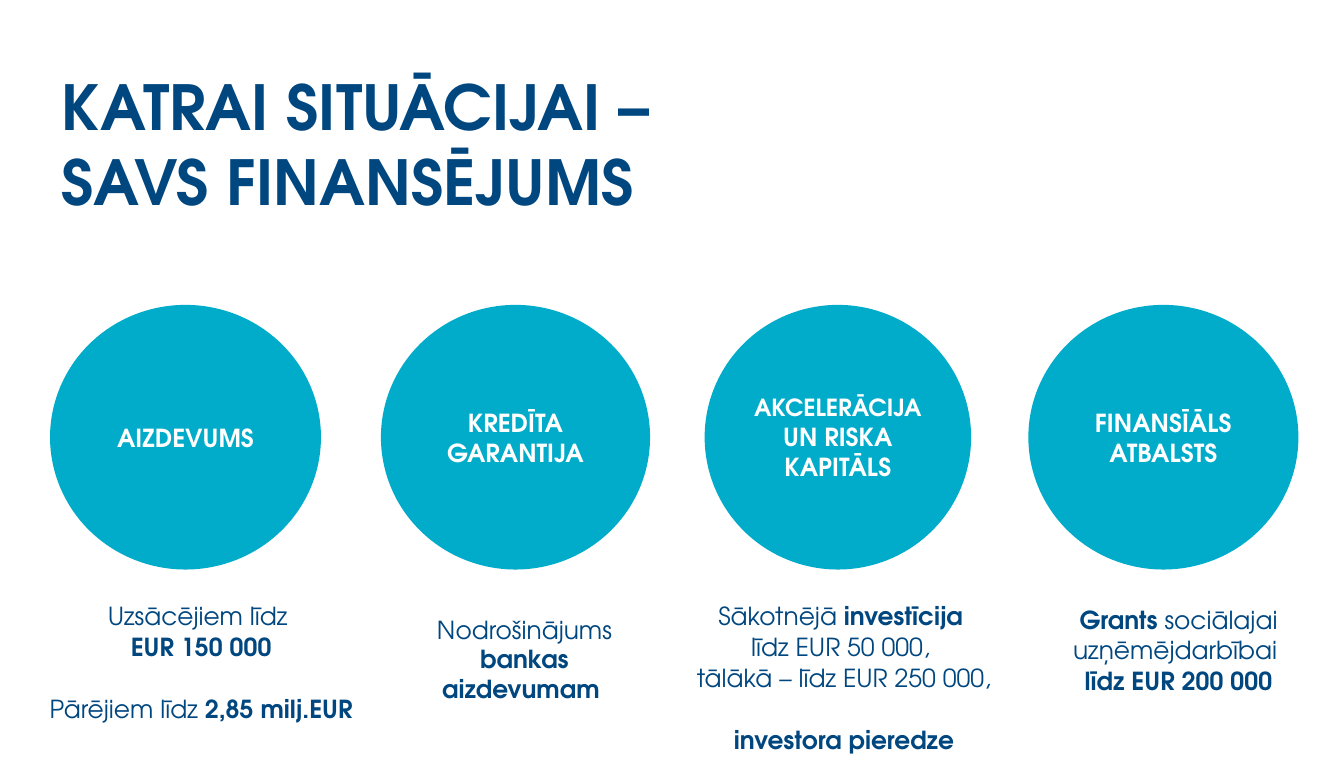
"""Build a slide of four kinds of funding, each a disc above a caption."""
from typing import NamedTuple

from pptx import Presentation
from pptx.dml.color import RGBColor
from pptx.enum.shapes import MSO_SHAPE
from pptx.enum.text import MSO_ANCHOR, MSO_AUTO_SIZE, PP_ALIGN
from pptx.slide import Slide
from pptx.text.text import TextFrame
from pptx.util import Inches, Pt

NAVY = RGBColor(0x00, 0x46, 0x7F)
TEAL = RGBColor(0x00, 0xAC, 0xC9)
WHITE = RGBColor(0xFF, 0xFF, 0xFF)
FONT = "TeX Gyre Adventor"
DISC_TOP, DISC_TALL = 3.41, 2.96


class Words(NamedTuple):
    """A run of text."""
    text: str
    bold: bool = False
    size: int = 20


class Line(NamedTuple):
    """A paragraph with the space before it in points."""
    pieces: tuple[Words, ...]
    before: int = 1


class Disc(NamedTuple):
    """A circle with its label."""
    left: float
    width: float
    lines: tuple[Line, ...]


class Note(NamedTuple):
    """A caption below a disc."""
    left: float
    top: float
    width: float
    height: float
    lines: tuple[Line, ...]


class Fund(NamedTuple):
    """One kind of funding."""
    disc: Disc
    note: Note


def label(*pieces: Words) -> tuple[Line, ...]:
    """Make one tight line for each piece."""
    return tuple(Line((piece,), 0) for piece in pieces)


TITLE = label(Words("KATRAI SITUĀCIJAI –", True, 50),
              Words("SAVS FINANSĒJUMS", True, 50))
FUNDS = (
    Fund(Disc(0.56, 3.03, label(Words("AIZDEVUMS", True))),
         Note(0.4, 6.71, 3.7, 1.4, (
             Line((Words("Uzsācējiem līdz "),), 0),
             Line((Words("EUR 150 000", True),)),
             Line((Words("Pārējiem līdz "),
                   Words("2,85 milj.EUR", True)), 26)))),
    Fund(Disc(4.26, 3.01, label(Words("KREDĪTA GARANTIJA", True))),
         Note(4.59, 6.86, 2.55, 1.02, (
             Line((Words("Nodrošinājums "),
                   Words("bankas aizdevumam ", True)), 0),))),
    Fund(Disc(7.88, 2.98, label(Words("AKCELERĀCIJA ", True, 19),
                                Words("UN RISKA KAPITĀLS", True))),
         Note(7.71, 6.71, 3.46, 1.75, (
             Line((Words("Sākotnējā "), Words("investīcija ", True)), 0),
             Line((Words("līdz EUR 50 000, "),)),
             Line((Words("tālākā – līdz EUR 250 000,"),)),
             Line((Words("investora pieredze", True),), 26)))),
    Fund(Disc(11.5, 3.02, label(Words("FINANSĪĀLS ATBALSTS", True))),
         Note(11.75, 6.75, 2.86, 1.04, (
             Line((Words("Grants", True),
                   Words(" sociālajai uzņēmējdarbībai ")), 0),
             Line((Words("līdz EUR 200 000", True),))))),
)


def write(frame: TextFrame, lines: tuple[Line, ...], color: RGBColor,
          align: PP_ALIGN = PP_ALIGN.CENTER) -> None:
    """Fill a frame with lines, run by run."""
    frame.word_wrap = True
    for place, line in enumerate(lines):
        para = frame.add_paragraph() if place else frame.paragraphs[0]
        para.alignment = align
        para.space_before = Pt(line.before)
        for piece in line.pieces:
            run = para.add_run()
            run.text = piece.text
            font = run.font
            font.name, font.size, font.bold = FONT, Pt(piece.size), piece.bold
            font.color.rgb = color


def draw_title(slide: Slide) -> None:
    """Place and fill the title."""
    title = slide.shapes.title
    title.left, title.top = Inches(0.59), Inches(0.72)
    title.width, title.height = Inches(13.59), Inches(1.78)
    frame = title.text_frame
    frame.auto_size = MSO_AUTO_SIZE.NONE
    frame.vertical_anchor = MSO_ANCHOR.TOP
    write(frame, TITLE, NAVY, PP_ALIGN.LEFT)


def draw_disc(slide: Slide, disc: Disc) -> None:
    """Draw a circle with its label."""
    shape = slide.shapes.add_shape(
        MSO_SHAPE.OVAL, Inches(disc.left), Inches(DISC_TOP),
        Inches(disc.width), Inches(DISC_TALL))
    shape.shadow.inherit = False
    shape.fill.solid()
    shape.fill.fore_color.rgb = TEAL
    shape.line.fill.background()
    shape.text_frame.vertical_anchor = MSO_ANCHOR.MIDDLE
    write(shape.text_frame, disc.lines, WHITE)


def draw_note(slide: Slide, note: Note) -> None:
    """Draw a caption."""
    box = slide.shapes.add_textbox(Inches(note.left), Inches(note.top),
                                   Inches(note.width), Inches(note.height))
    frame = box.text_frame
    frame.margin_left = frame.margin_right = frame.margin_bottom = 0
    frame.margin_top = Inches(0.01)
    write(frame, note.lines, NAVY)


def main() -> None:
    """Build and save the slide."""
    deck = Presentation()
    deck.slide_width, deck.slide_height = Inches(15.03), Inches(8.6)
    slide = deck.slides.add_slide(deck.slide_layouts.get_by_name("Title Only"))
    draw_title(slide)
    for fund in FUNDS:
        draw_disc(slide, fund.disc)
        draw_note(slide, fund.note)
    deck.save("out.pptx")


if __name__ == "__main__":
    main()
